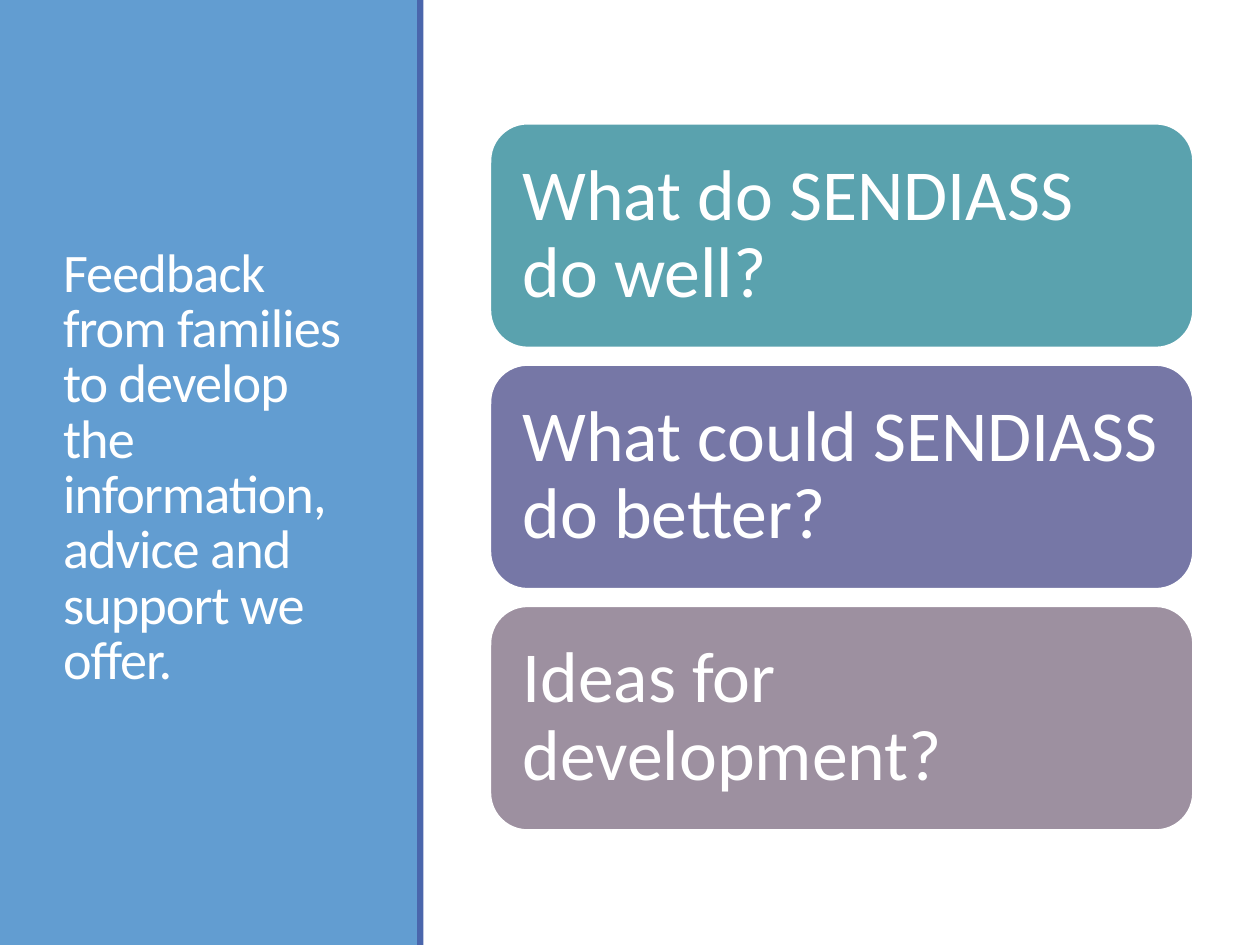
from pptx import Presentation
from pptx.dml.color import RGBColor
from pptx.enum.shapes import MSO_SHAPE as SHAPE
from pptx.enum.text import MSO_ANCHOR as ANCHOR, MSO_AUTO_SIZE as AUTO, PP_ALIGN as ALIGN
from pptx.util import Inches, Pt

COLORS = {"panel": "629DD1", "rule": "4A66AC", "white": "FFFFFF",
          "teal": "5AA2AE", "violet": "7677A6", "mauve": "9D90A0"}
TITLE = "Feedback from families to develop the information, advice and support we offer."
QUESTIONS = [("What do SENDIASS do well?", "teal"),
             ("What could SENDIASS do better?", "violet"),
             ("Ideas for development?", "mauve")]
CARD_LEFT, CARD_TOP, CARD_W, CARD_H, CARD_STEP = 3.89, 0.98, 5.58, 1.78, 1.915
INSET = 0.17


def rgb(name):
    return RGBColor.from_string(COLORS[name])


def add_box(s, kind, left, top, width, height, color):
    sp = s.shapes.add_shape(kind, Inches(left), Inches(top), Inches(width), Inches(height))
    sp.shadow.inherit = False
    sp.fill.solid()
    sp.fill.fore_color.rgb = rgb(color)
    sp.line.fill.background()
    return sp


def set_text(sp, text, size, spacing):
    tf = sp.text_frame
    tf.text = text
    tf.word_wrap = True
    tf.auto_size = AUTO.NONE
    tf.vertical_anchor = ANCHOR.MIDDLE
    p = tf.paragraphs[0]
    p.alignment = ALIGN.LEFT
    p.line_spacing = spacing
    font = p.runs[0].font
    font.name = "Calibri"
    font.size = Pt(size)
    font.color.rgb = rgb("white")
    return tf


def main():
    prs = Presentation()
    prs.slide_width, prs.slide_height = Inches(10), Inches(7.5)
    s = prs.slides.add_slide(prs.slide_layouts[5])

    add_box(s, SHAPE.RECTANGLE, 0, 0, 3.32, 7.5, "panel")
    add_box(s, SHAPE.RECTANGLE, 3.31, 0, 0.05, 7.5, "rule")

    title = s.shapes.title
    title.left, title.top = Inches(0.4), Inches(0.57)
    title.width, title.height = Inches(2.53), Inches(6.31)
    tf = set_text(title, TITLE, 31, 0.85)
    tf.paragraphs[0].runs[0].font._element.set("spc", "-50")
    title.element.getparent().append(title.element)

    for i, (question, color) in enumerate(QUESTIONS):
        card = add_box(s, SHAPE.ROUNDED_RECTANGLE, CARD_LEFT, CARD_TOP + i * CARD_STEP,
                       CARD_W, CARD_H, color)
        card.line.color.rgb = rgb("white")
        card.line.width = Pt(1.25)
        tf = set_text(card, question, 41, 0.9)
        tf.margin_left = tf.margin_right = Inches(INSET)
        tf.margin_top = tf.margin_bottom = Inches(INSET)

    prs.save("out.pptx")


if __name__ == "__main__":
    main()
